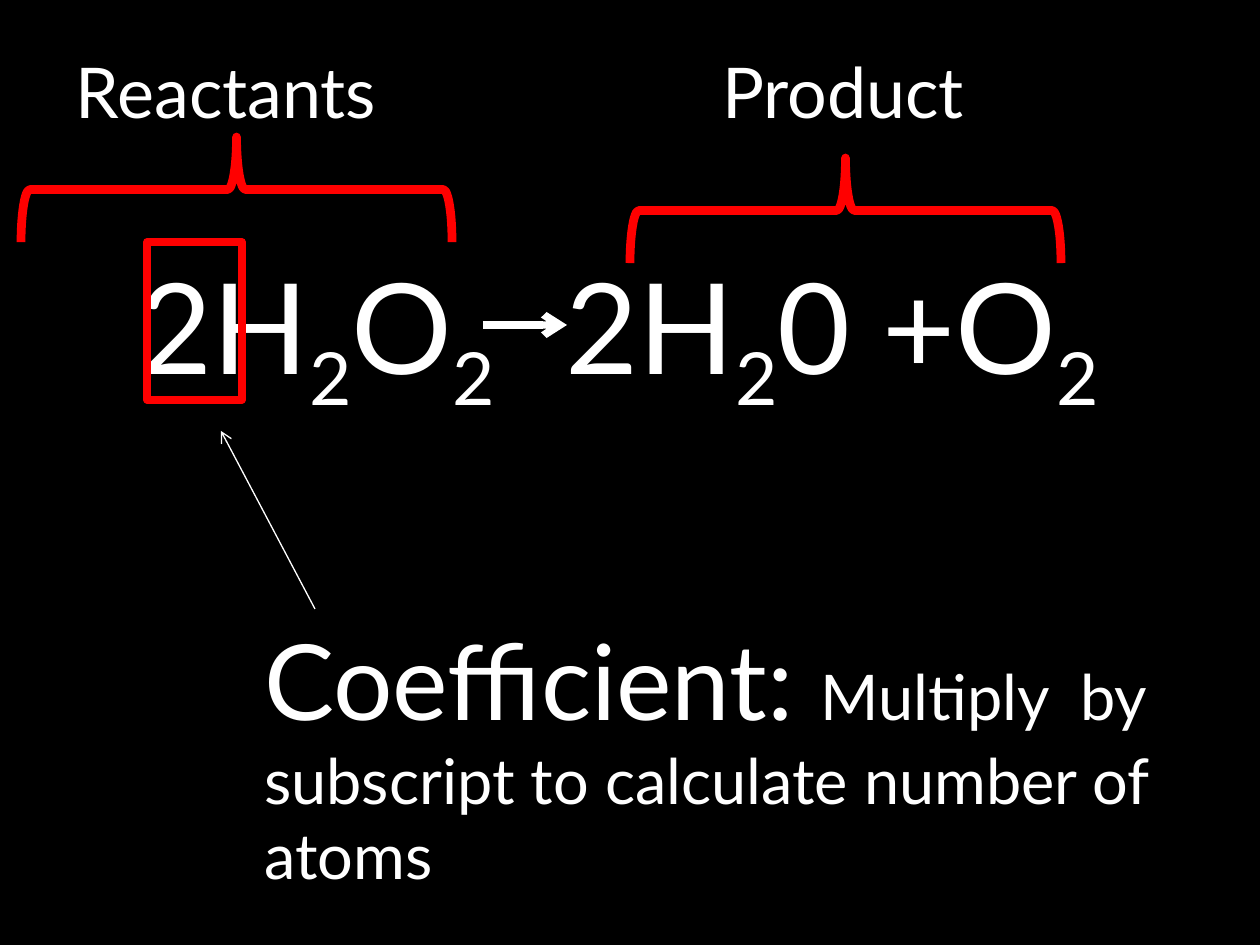
from lxml import etree
from pptx import Presentation
from pptx.dml.color import RGBColor
from pptx.enum.shapes import MSO_CONNECTOR, MSO_SHAPE
from pptx.enum.text import PP_ALIGN
from pptx.oxml.ns import qn
from pptx.util import Emu, Pt

STRAIGHT = MSO_CONNECTOR.STRAIGHT
RECTANGLE, BRACE = MSO_SHAPE.RECTANGLE, MSO_SHAPE.LEFT_BRACE
LEFT, CENTER = PP_ALIGN.LEFT, PP_ALIGN.CENTER
EMU_PER_PX = 914400 / 126
SLIDE_SIZE = (1260, 945)
BLACK, WHITE, RED = "000000", "FFFFFF", "FF0000"
SUBSCRIPT = "-25000"
HANGING = 48

EQUATION = [("2H", 72), ("2", 72, SUBSCRIPT), ("O", 72), ("2", 72, SUBSCRIPT),
            (" \t2H", 72), ("2", 72, SUBSCRIPT), ("0 +O", 72), ("2", 72, SUBSCRIPT)]
DEFINITION = [("Coefficient: ", 60),
              ("Multiply  by subscript to calculate number of atoms", 36)]
TEXTS = [
    ((0, 242, 1239, 624), CENTER, HANGING, EQUATION),
    ((252, 609, 935, 292), LEFT, 0, DEFINITION),
    ((21, 42, 410, 97), CENTER, 0, [("Reactants", 40)]),
    ((638, 42, 410, 97), CENTER, 0, [("Product", 40)]),
]
OUTLINES = [
    (RECTANGLE, (147, 242, 95, 158), 4.25, {}),
    (BRACE, (184, -26, 105, 431), 5, {"rotation": 90}),
    (BRACE, (793, -5, 105, 431), 5, {"rotation": 90}),
]
ARROWS = [
    ((483, 325, 567, 325), 4.25),
    ((315, 609, 221, 431), 0.75),
]


def px(*lengths):
    return [Emu(round(length * EMU_PER_PX)) for length in lengths]


def color(value):
    return RGBColor.from_string(value)


def assign(target, values):
    for name, value in values.items():
        setattr(target, name, value)


def add_text(slide, box, alignment, hanging, pieces):
    frame = slide.shapes.add_textbox(*px(*box)).text_frame
    frame.word_wrap = True
    paragraph = frame.paragraphs[0]
    paragraph.alignment = alignment
    if hanging:
        properties = paragraph._p.get_or_add_pPr()
        indent, = px(hanging)
        properties.set("marL", str(indent))
        properties.set("indent", str(-indent))
    for words, size, *baseline in pieces:
        run = paragraph.add_run()
        run.text = words
        assign(run.font, {"name": "Lato", "size": Pt(size)})
        run.font.color.rgb = color(WHITE)
        for shift in baseline:
            run.font._element.set("baseline", shift)


def add_outline(slide, preset, box, weight, values):
    outline = slide.shapes.add_shape(preset, *px(*box))
    outline.shadow.inherit = False
    outline.fill.background()
    outline.line.color.rgb = color(RED)
    outline.line.width = Pt(weight)
    assign(outline, values)


def add_arrow(slide, ends, weight):
    arrow = slide.shapes.add_connector(STRAIGHT, *px(*ends))
    arrow.line.color.rgb = color(WHITE)
    arrow.line.width = Pt(weight)
    etree.SubElement(arrow.line._get_or_add_ln(), qn("a:tailEnd"), type="arrow")
    etree.SubElement(arrow._element.spPr, qn("a:effectLst"))


def main():
    """Build the slide on reactants, products and coefficients."""
    deck = Presentation()
    deck.slide_width, deck.slide_height = px(*SLIDE_SIZE)
    slide = deck.slides.add_slide(deck.slide_layouts[6])
    slide.background.fill.solid()
    slide.background.fill.fore_color.rgb = color(BLACK)
    for text in TEXTS:
        add_text(slide, *text)
    for outline in OUTLINES:
        add_outline(slide, *outline)
    for arrow in ARROWS:
        add_arrow(slide, *arrow)
    deck.save("out.pptx")


if __name__ == "__main__":
    main()
